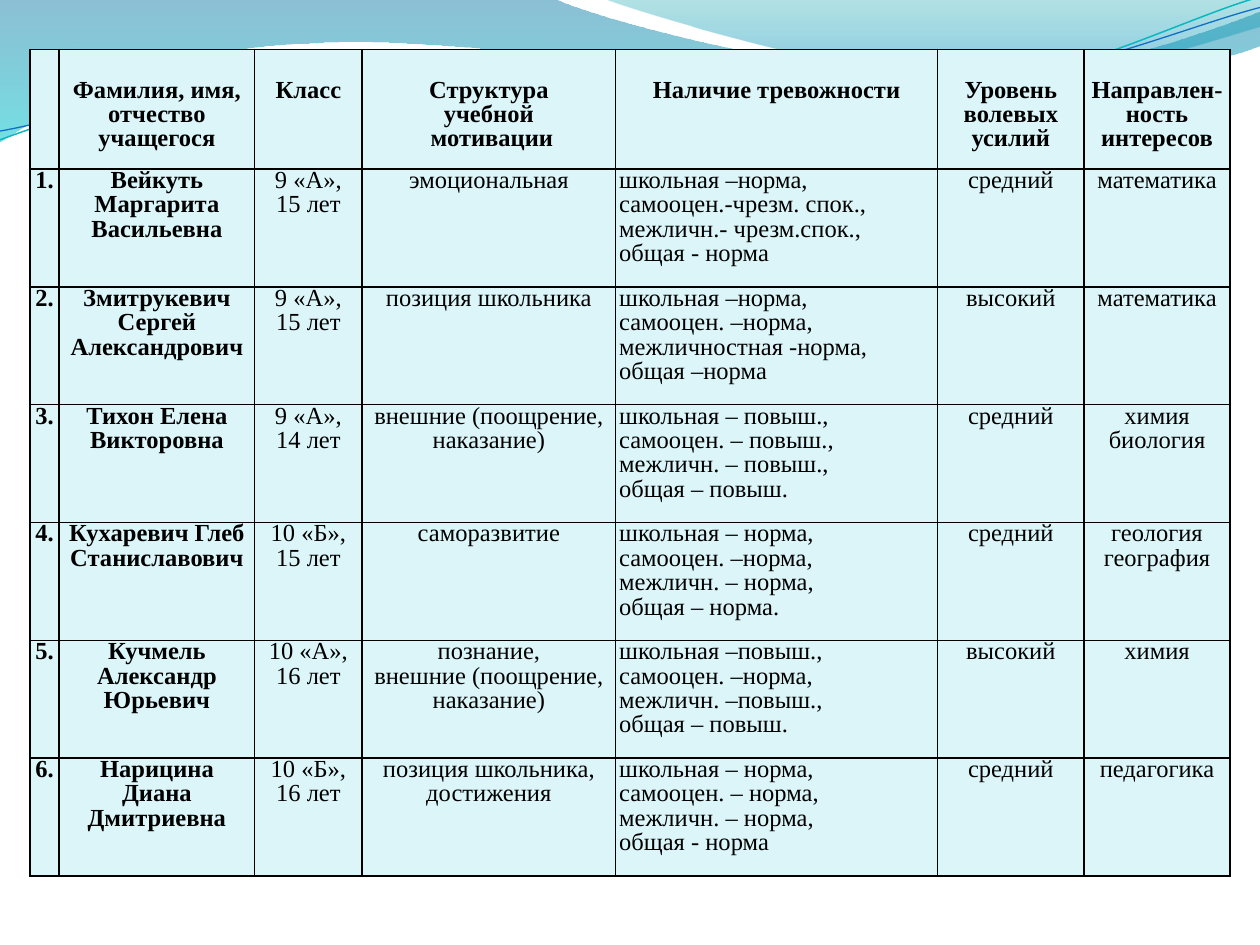
from math import cos, radians, sin

from lxml.etree import SubElement as Sub
from pptx import Presentation
from pptx.dml.color import RGBColor as Rgb
from pptx.enum.text import PP_ALIGN as Align
from pptx.oxml.ns import qn
from pptx.util import Pt

HEX = {
    "cell": "DBF5F9", "ink": "000000",
    "blue": "0074A1", "cyan": "00C6CF", "teal": "00A1A9", "sky": "008BBF",
    "aqua": "0AB8BF", "navy": "0F6FC6",
}
FONT = "Times New Roman"
TILT = -2.7

# Outlines: a start, then lines (2 numbers) and Bezier curves (6 numbers).
# Gradient stops: position, colour, opacity in per cent.
WAVES = [
    ([(0, 0), (316.8, -0.7),
      (342.7, 12.2, 478.1, 45.4, 545.8, 45.4),
      (614.2, 45.4, 689.8, 18.7, 720, 6.5), (720.7, 25.9),
      (707.8, 31.7, 626.4, 54.7, 537.1, 54),
      (447.8, 54, 275, 20.2, 185, 24.5),
      (92.9, 25.9, 33.1, 59.8, -0.7, 81.4), (0, 0)],
     [(0, "blue", 45), (1, "cyan", 55)]),
    ([(344.9, -0.7), (366.5, 7.9, 491, 44.6, 553.7, 46.8),
      (616.3, 49.7, 691.9, 23, 720, 15.1), (720, 0), (344.9, -0.7)],
     [(0, "teal", 30), (0.8, "sky", 45)]),
]
# Lines: outline as seen after the tilt, centre, colour, width.
LINES = [
    ([(0, 79.9), (34.6, 67, 113.8, 41, 199.4, 37.4),
      (284.4, 33.8, 427, 64.1, 513.4, 57.6),
      (599.8, 51.1, 675.4, 10.8, 718.6, -1.4)], (359.3, 41.4), "aqua", 0.85),
    ([(0, 74.9), (33.8, 69.1, 118.1, 43.9, 203.8, 40.3),
      (290.2, 36.7, 429.8, 60.5, 516.2, 54),
      (601.9, 48.2, 677.5, 15.1, 720, 4.3)], (359.6, 42.5), "navy", 0.75),
]

COLS = [16.85, 111.7, 61.4, 144.9, 184, 83.7, 83.4]
HEAD_H, ROW_H = 68.3, 67.35
INDEX, NAME, FEARS = 0, 1, 4
HEAD = ["", "Фамилия, имя, отчество учащегося", "Класс",
        "Структура\nучебной\n мотивации", "Наличие тревожности",
        "Уровень волевых усилий", "Направлен-ность интересов"]
PUPILS = [
    ("Вейкуть Маргарита Васильевна", "9 «А»,\n15 лет", "эмоциональная",
     "школьная –норма,\nсамооцен.-чрезм. спок.,\n"
     "межличн.- чрезм.спок.,\nобщая - норма", "средний", "математика"),
    ("Змитрукевич Сергей Александрович", "9 «А»,\n15 лет",
     "позиция школьника",
     "школьная –норма,\nсамооцен. –норма,\n"
     "межличностная -норма,\nобщая –норма", "высокий", "математика"),
    ("Тихон Елена Викторовна", "9 «А»,\n14 лет",
     "внешние (поощрение,\nнаказание)",
     "школьная – повыш.,\nсамооцен. – повыш.,\n"
     "межличн. – повыш.,\nобщая – повыш.", "средний", "химия\nбиология"),
    ("Кухаревич Глеб Станиславович", "10 «Б»,\n15 лет", "саморазвитие",
     "школьная – норма,\nсамооцен. –норма,\n"
     "межличн. – норма,\nобщая – норма.", "средний", "геология\nгеография"),
    ("Кучмель Александр Юрьевич", "10 «А»,\n16 лет",
     "познание,\nвнешние (поощрение,\nнаказание)",
     "школьная –повыш.,\nсамооцен. –норма,\n"
     "межличн. –повыш.,\nобщая – повыш.", "высокий", "химия"),
    ("Нарицина Диана Дмитриевна", "10 «Б»,\n16 лет",
     "позиция школьника,\nдостижения",
     "школьная – норма,\nсамооцен. – норма,\n"
     "межличн. – норма,\nобщая - норма", "средний", "педагогика"),
]


def color(name):
    return Rgb.from_string(HEX[name])


def turn(seg, mid, angle):
    """Turn the points of one segment about mid, clockwise in degrees."""
    c, s = cos(radians(angle)), sin(radians(angle))
    out = []
    for x, y in zip(seg[::2], seg[1::2]):
        dx, dy = x - mid[0], y - mid[1]
        out += [mid[0] + dx * c - dy * s, mid[1] + dx * s + dy * c]
    return out


def add_curve(slide, segs, close):
    """Lay out every point as a corner, then join triples into curves."""
    pts = [(Pt(x), Pt(y)) for seg in segs
           for x, y in zip(seg[::2], seg[1::2])]
    form = slide.shapes.build_freeform(*pts[0])
    form.add_line_segments(pts[1:], close=close)
    shape = form.convert_to_shape()
    shape.shadow.inherit = False
    steps = iter(list(shape.element.spPr.iter(qn("a:lnTo"))))
    for seg in segs[1:]:
        step = next(steps)
        if len(seg) == 6:
            step.tag = qn("a:cubicBezTo")
            for _ in range(2):
                more = next(steps)
                step.append(more[0])
                more.getparent().remove(more)
    return shape


def add_wave(slide, segs, stops):
    shape = add_curve(slide, segs, True)
    shape.line.fill.background()
    fill = shape.fill
    fill.gradient()
    fill.gradient_angle = 270
    for stop, (pos, name, part) in zip(fill.gradient_stops, stops):
        stop.position = pos
        stop.color.rgb = color(name)
    tags = shape.element.spPr.iter(qn("a:srgbClr"))
    for tag, (pos, name, part) in zip(tags, stops):
        Sub(tag, qn("a:alpha"), val=str(part * 1000))


def add_line(slide, segs, mid, name, width):
    shape = add_curve(slide, [turn(seg, mid, -TILT) for seg in segs], False)
    shape.rotation = TILT
    shape.fill.background()
    shape.line.color.rgb = color(name)
    shape.line.width = Pt(width)


def add_edges(cell):
    props = cell._tc.get_or_add_tcPr()
    for side in ("lnL", "lnR", "lnT", "lnB"):
        edge = Sub(props, qn("a:" + side), w=str(Pt(1)))
        Sub(Sub(edge, qn("a:solidFill")), qn("a:srgbClr"), val=HEX["ink"])


def fill_cell(cell, text, align, bold, top):
    add_edges(cell)
    cell.fill.solid()
    cell.fill.fore_color.rgb = color("cell")
    cell.margin_left = cell.margin_right = Pt(2)
    cell.margin_top, cell.margin_bottom = Pt(top), Pt(0)
    if not text:
        return
    frame = cell.text_frame
    for i, words in enumerate(text.split("\n")):
        para = frame.add_paragraph() if i else frame.paragraphs[0]
        para.alignment = align
        para.line_spacing = 0.9
        run = para.add_run()
        run.text = words
        font = run.font
        font.name, font.size, font.bold = FONT, Pt(14), bold
        font.color.rgb = color("ink")


def add_grid(slide):
    rows = [HEAD] + [(f"{n}.", *row) for n, row in enumerate(PUPILS, 1)]
    high = HEAD_H + ROW_H * len(PUPILS)
    grid = slide.shapes.add_table(len(rows), len(COLS), Pt(17), Pt(28.3),
                                  Pt(sum(COLS)), Pt(high)).table
    grid.first_row = grid.horz_banding = False
    for col, width in zip(grid.columns, COLS):
        col.width = Pt(width)
    for r, row in enumerate(rows):
        head = r == 0
        grid.rows[r].height = Pt(HEAD_H if head else ROW_H)
        for c, text in enumerate(row):
            left = c == FEARS and not head
            fill_cell(grid.cell(r, c), text,
                      Align.JUSTIFY if left else Align.CENTER,
                      head or c in (INDEX, NAME), 16.7 if head else 0)


def main():
    deck = Presentation()
    deck.slide_width, deck.slide_height = Pt(720), Pt(540)
    slide = deck.slides.add_slide(deck.slide_layouts[6])
    for wave in WAVES:
        add_wave(slide, *wave)
    for line in LINES:
        add_line(slide, *line)
    add_grid(slide)
    deck.save("out.pptx")


if __name__ == "__main__":
    main()
